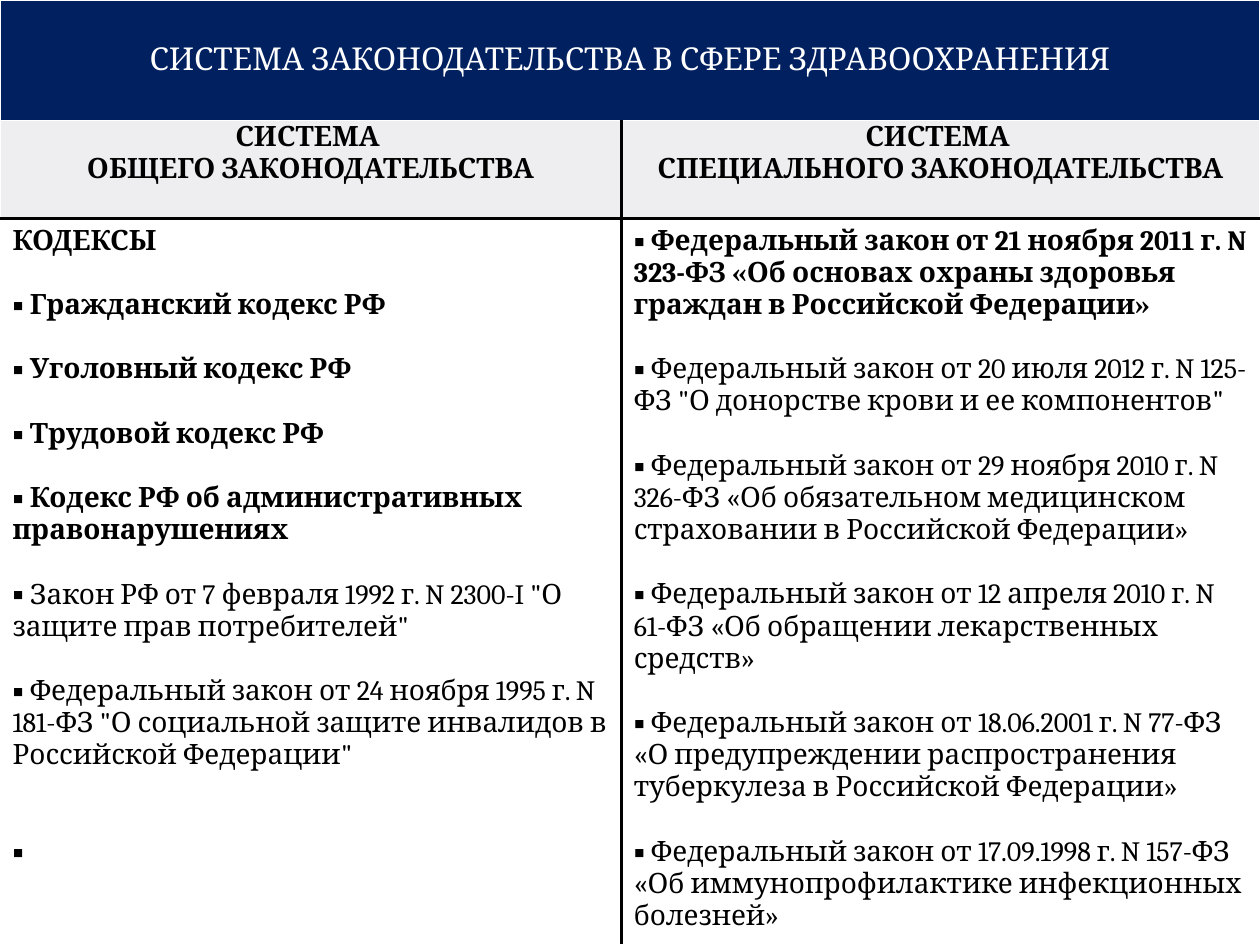
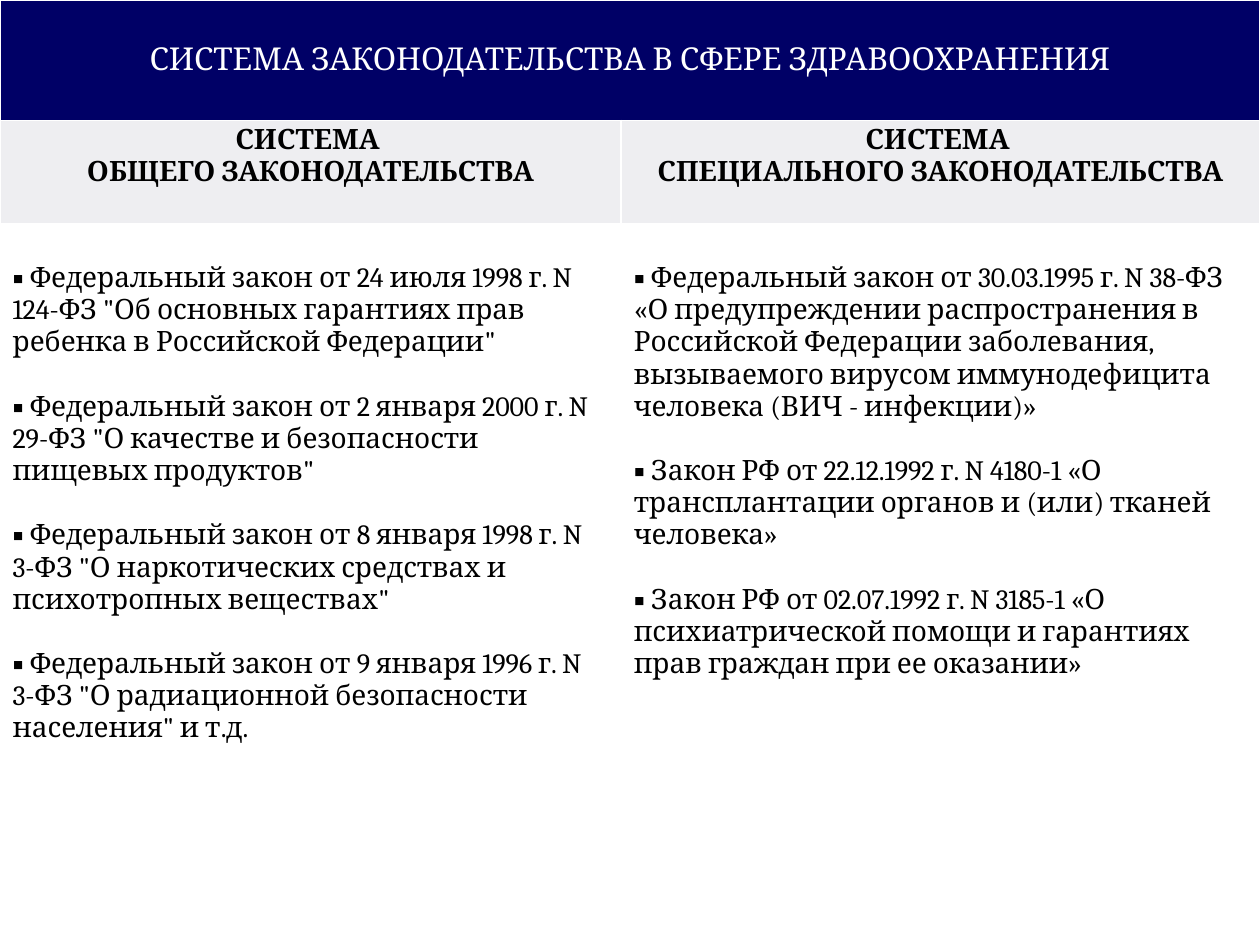
from dataclasses import dataclass

from lxml import etree
from pptx import Presentation
from pptx.dml.color import RGBColor
from pptx.enum.text import MSO_ANCHOR, PP_ALIGN
from pptx.oxml.ns import qn
from pptx.util import Pt

CENTER, LEFT = PP_ALIGN.CENTER, PP_ALIGN.LEFT
MIDDLE, TOP = MSO_ANCHOR.MIDDLE, MSO_ANCHOR.TOP


@dataclass(frozen=True)
class Theme:
    font: str = "Cambria"
    title_size: float = 18
    body_size: float = 16
    line: float = 18.4
    white: str = "FFFFFF"
    black: str = "000000"
    header: str = "EEEEF1"
    thin: float = 1
    thick: float = 2.25


T = Theme()
TITLE = "СИСТЕМА ЗАКОНОДАТЕЛЬСТВА В СФЕРЕ ЗДРАВООХРАНЕНИЯ"
HEADERS = ["ОБЩЕГО ЗАКОНОДАТЕЛЬСТВА", "СПЕЦИАЛЬНОГО ЗАКОНОДАТЕЛЬСТВА"]
COLUMNS = [355, 365]

SLIDES = [
    {
        "band": "002060",
        "rows": [69, 56, 415],
        "ruled": True,
        "top": 3.6,
        "bodies": [
            [
                ("КОДЕКСЫ", True, False, 0),
                ("Гражданский кодекс РФ", True, True, 1),
                ("Уголовный кодекс РФ", True, True, 1),
                ("Трудовой кодекс РФ", True, True, 1),
                ("Кодекс РФ об административных правонарушениях", True, True, 1),
                ('Закон РФ от 7 февраля 1992 г. N 2300-I "О защите прав потребителей"', False, True, 1),
                ('Федеральный закон от 24 ноября 1995 г. N 181-ФЗ "О социальной защите инвалидов в Российской Федерации"', False, True, 1),
                ("", True, True, 2),
            ],
            [
                ("Федеральный закон от 21 ноября 2011 г. N 323-ФЗ «Об основах охраны здоровья граждан в Российской Федерации»", True, True, 0),
                ('Федеральный закон от 20 июля 2012 г. N 125-ФЗ "О донорстве крови и ее компонентов"', False, True, 1),
                ("Федеральный закон от 29 ноября 2010 г. N 326-ФЗ «Об обязательном медицинском страховании в Российской Федерации»", False, True, 1),
                ("Федеральный закон от 12 апреля 2010 г. N 61-ФЗ «Об обращении лекарственных средств»", False, True, 1),
                ("Федеральный закон от 18.06.2001 г. N 77-ФЗ «О предупреждении распространения туберкулеза в Российской Федерации»", False, True, 1),
                ("Федеральный закон от 17.09.1998 г. N 157-ФЗ «Об иммунопрофилактике инфекционных болезней»", False, True, 1),
            ],
        ],
    },
    {
        "band": "000066",
        "rows": [69, 59, 410],
        "ruled": False,
        "top": 22,
        "bodies": [
            [
                ('Федеральный закон от 24 июля 1998 г. N 124-ФЗ "Об основных гарантиях прав ребенка в Российской Федерации"', False, True, 0),
                ('Федеральный закон от 2 января 2000 г. N 29-ФЗ "О качестве и безопасности пищевых продуктов"', False, True, 1),
                ('Федеральный закон от 8 января 1998 г. N 3-ФЗ "О наркотических средствах и психотропных веществах"', False, True, 1),
                ('Федеральный закон от 9 января 1996 г. N 3-ФЗ "О радиационной безопасности населения" и т.д.', False, True, 1),
            ],
            [
                ("Федеральный закон от 30.03.1995 г. N 38-ФЗ «О предупреждении распространения в Российской Федерации заболевания, вызываемого вирусом иммунодефицита человека (ВИЧ - инфекции)»", False, True, 0),
                ("Закон РФ от 22.12.1992 г. N 4180-1 «О трансплантации органов и (или) тканей человека»", False, True, 1),
                ("Закон РФ от 02.07.1992 г. N 3185-1 «О психиатрической помощи и гарантиях прав граждан при ее оказании»", False, True, 1),
            ],
        ],
    },
]


def style_cell(cell, fill, anchor, top, bottom, black_sides=""):
    tcPr = cell._tc.get_or_add_tcPr()
    for side in "LRTB":
        color, width = (T.black, T.thick) if side in black_sides else (T.white, T.thin)
        ln = etree.SubElement(tcPr, qn(f"a:ln{side}"), w=str(Pt(width)))
        solid = etree.SubElement(ln, qn("a:solidFill"))
        etree.SubElement(solid, qn("a:srgbClr"), val=color)
    cell.fill.solid()
    cell.fill.fore_color.rgb = RGBColor.from_string(fill)
    cell.vertical_anchor = anchor
    cell.margin_left = cell.margin_right = Pt(7.2)
    cell.margin_top, cell.margin_bottom = Pt(top), Pt(bottom)


def write(cell, lines, size, color, align):
    tf = cell.text_frame
    for i, (text, bold, bullet, gap) in enumerate(lines):
        p = tf.add_paragraph() if i else tf.paragraphs[0]
        p.alignment = align
        if bullet:
            pPr = p._p.get_or_add_pPr()
            pPr.set("marL", "0")
            pPr.set("indent", "0")
            etree.SubElement(pPr, qn("a:buFont"), typeface=T.font)
            etree.SubElement(pPr, qn("a:buChar"), char="▪")
        if gap:
            p.space_before = Pt(gap * T.line)
        r = p.add_run()
        r.text = " " + text if bullet else text
        r.font.name, r.font.size, r.font.bold = T.font, Pt(size), bold
        r.font.color.rgb = RGBColor.from_string(color)


prs = Presentation()
prs.slide_width, prs.slide_height = Pt(720), Pt(540)

for page in SLIDES:
    s = prs.slides.add_slide(prs.slide_layouts[6])
    frame = s.shapes.add_table(3, 2, 0, 0, Pt(sum(COLUMNS)), Pt(sum(page["rows"])))
    table = frame.table
    table.first_row = table.horz_banding = False
    for column, width in zip(table.columns, COLUMNS):
        column.width = Pt(width)
    for row, height in zip(table.rows, page["rows"]):
        row.height = Pt(height)

    title = table.cell(0, 0)
    title.merge(table.cell(0, 1))
    for cell in (title, table.cell(0, 1)):
        style_cell(cell, page["band"], MIDDLE, 3.6, 3.6)
    write(title, [(TITLE, False, False, 0)], T.title_size, T.white, CENTER)

    for col, (header, body) in enumerate(zip(HEADERS, page["bodies"])):
        inner = "RL"[col] if page["ruled"] else ""
        head_cell, body_cell = table.cell(1, col), table.cell(2, col)
        style_cell(head_cell, T.header, MIDDLE, 0, T.line, inner and inner + "B")
        style_cell(body_cell, T.white, TOP, page["top"], 3.6, inner and inner + "T")
        header_lines = [("СИСТЕМА ", True, False, 0), (header, True, False, 0)]
        write(head_cell, header_lines, T.body_size, T.black, CENTER)
        write(body_cell, body, T.body_size, T.black, LEFT)

prs.save("out.pptx")
